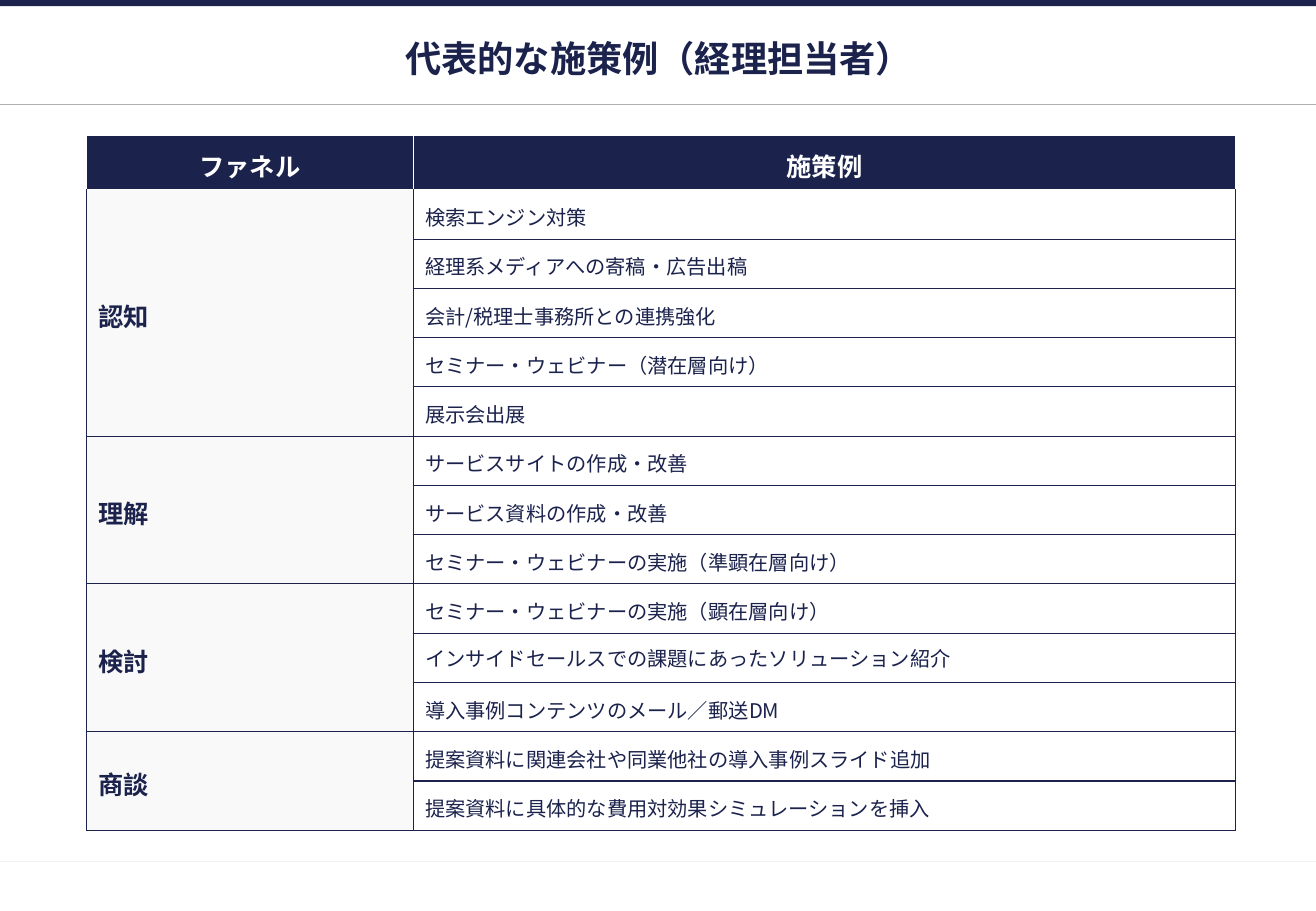
from lxml import etree
from pptx import Presentation
from pptx.dml.color import RGBColor
from pptx.enum import shapes, text
from pptx.oxml import ns
from pptx.util import Cm, Pt

COLORS = {"navy": "1B224C", "white": "FFFFFF", "label": "F9F9F9",
          "rule": "AFAFAF", "footer": "F2F2F2"}
FONT = "Noto Sans CJK JP"
FORMATS = {
    "title": {"size": Pt(21.5), "bold": True},
    "heading": {"size": Pt(15), "bold": True},
    "body": {"size": Pt(12), "bold": False},
}
WIDTH, HEIGHT = Cm(27.52), Cm(19.05)
HEADERS = ["ファネル", "施策例"]
FUNNEL = {
    "認知": ["検索エンジン対策", "経理系メディアへの寄稿・広告出稿",
           "会計/税理士事務所との連携強化",
           "セミナー・ウェビナー（潜在層向け）", "展示会出展"],
    "理解": ["サービスサイトの作成・改善", "サービス資料の作成・改善",
           "セミナー・ウェビナーの実施（準顕在層向け）"],
    "検討": ["セミナー・ウェビナーの実施（顕在層向け）",
           "インサイドセールスでの課題にあったソリューション紹介",
           "導入事例コンテンツのメール／郵送DM"],
    "商談": ["提案資料に関連会社や同業他社の導入事例スライド追加",
           "提案資料に具体的な費用対効果シミュレーションを挿入"],
}
SINGLE_SPACED = FUNNEL["検討"][1]


def color(name):
    return RGBColor.from_string(COLORS[name])


def write(frame, words, style, color_name, alignment, spacing):
    paragraph = frame.paragraphs[0]
    paragraph.alignment = alignment
    paragraph.line_spacing = spacing
    run = paragraph.add_run()
    run.text = words
    for name, value in FORMATS[style].items():
        setattr(run.font, name, value)
    run.font.name = FONT
    run.font.color.rgb = color(color_name)
    east_asian = etree.SubElement(run.font._element, ns.qn("a:ea"))
    east_asian.set("typeface", FONT)


def add_rule(slide, top, color_name):
    line = slide.shapes.add_connector(
        shapes.MSO_CONNECTOR.STRAIGHT, 0, top, WIDTH, top)
    line.line.color.rgb = color(color_name)
    line.line.width = Pt(0.75)
    etree.SubElement(line._element.spPr, ns.qn("a:effectLst"))


def add_header(slide, left, top, width, height):
    bar = slide.shapes.add_shape(
        shapes.MSO_SHAPE.RECTANGLE, left, top, width, Cm(0.13))
    bar.shadow.inherit = False
    bar.fill.solid()
    bar.fill.fore_color.rgb = color("navy")
    bar.line.fill.background()
    add_rule(slide, top + height, "rule")

    title = slide.shapes.title
    box = {"left": left + Cm(1.27), "top": top + Cm(0.74),
           "width": Cm(25.02), "height": Cm(0.99)}
    for name, value in box.items():
        setattr(title, name, value)
    frame_format = {
        "margin_left": Cm(0.1), "margin_right": Cm(0.1),
        "margin_top": Cm(0.1), "margin_bottom": Cm(0.13),
        "vertical_anchor": text.MSO_ANCHOR.MIDDLE,
        "auto_size": text.MSO_AUTO_SIZE.NONE, "word_wrap": True,
    }
    for name, value in frame_format.items():
        setattr(title.text_frame, name, value)
    write(title.text_frame, "代表的な施策例（経理担当者）", "title", "navy",
          text.PP_ALIGN.CENTER, 1.0)


def set_borders(cell, edges):
    properties = cell._tc.get_or_add_tcPr()
    for index, (side, color_name) in enumerate(edges.items()):
        line = etree.Element(ns.qn(f"a:ln{side}"), w=str(Pt(0.75)))
        fill = etree.SubElement(line, ns.qn("a:solidFill"))
        etree.SubElement(fill, ns.qn("a:srgbClr"), val=COLORS[color_name])
        properties.insert(index, line)


def style_cell(cell, row, column):
    cell.vertical_anchor = text.MSO_ANCHOR.MIDDLE
    cell.margin_left = cell.margin_right = Cm(0.25)
    cell.margin_top = cell.margin_bottom = Cm(0.13)
    cell.fill.solid()
    fill = "navy" if row == 0 else ("label", "white")[column]
    cell.fill.fore_color.rgb = color(fill)
    edges = dict.fromkeys("LRTB", "white" if row == 0 else "navy")
    if row == 1:
        edges["T"] = "white"
    set_borders(cell, edges)


def add_funnel_table(slide, left, top, width, height):
    row_count = 1 + sum(len(actions) for actions in FUNNEL.values())
    table = slide.shapes.add_table(
        row_count, len(HEADERS), left, top, width, height).table
    table.first_row = table.horz_banding = False
    table.columns[0].width = Cm(6.83)
    table.columns[1].width = width - Cm(6.83)
    header_height = Cm(1.11)
    for row in range(row_count):
        table.rows[row].height = (
            header_height if row == 0
            else (height - header_height) // (row_count - 1))
        for column in range(len(HEADERS)):
            style_cell(table.cell(row, column), row, column)

    for column, header in enumerate(HEADERS):
        write(table.cell(0, column).text_frame, header, "heading", "white",
              text.PP_ALIGN.CENTER, 1.15)
    first = 1
    for stage, actions in FUNNEL.items():
        stage_cell = table.cell(first, 0)
        stage_cell.merge(table.cell(first + len(actions) - 1, 0))
        write(stage_cell.text_frame, stage, "heading", "navy",
              text.PP_ALIGN.LEFT, 1.15)
        for row, action in enumerate(actions, first):
            write(table.cell(row, 1).text_frame, action, "body", "navy",
                  text.PP_ALIGN.LEFT,
                  1.0 if action == SINGLE_SPACED else 1.15)
        first += len(actions)


def main():
    presentation = Presentation()
    presentation.slide_width, presentation.slide_height = WIDTH, HEIGHT
    slide = presentation.slides.add_slide(presentation.slide_layouts[5])
    add_rule(slide, Cm(18.01), "footer")
    add_header(slide, 0, 0, WIDTH, Cm(2.19))
    add_funnel_table(slide, Cm(1.81), Cm(2.83), Cm(24.03), Cm(14.5))
    presentation.save("out.pptx")


if __name__ == "__main__":
    main()
